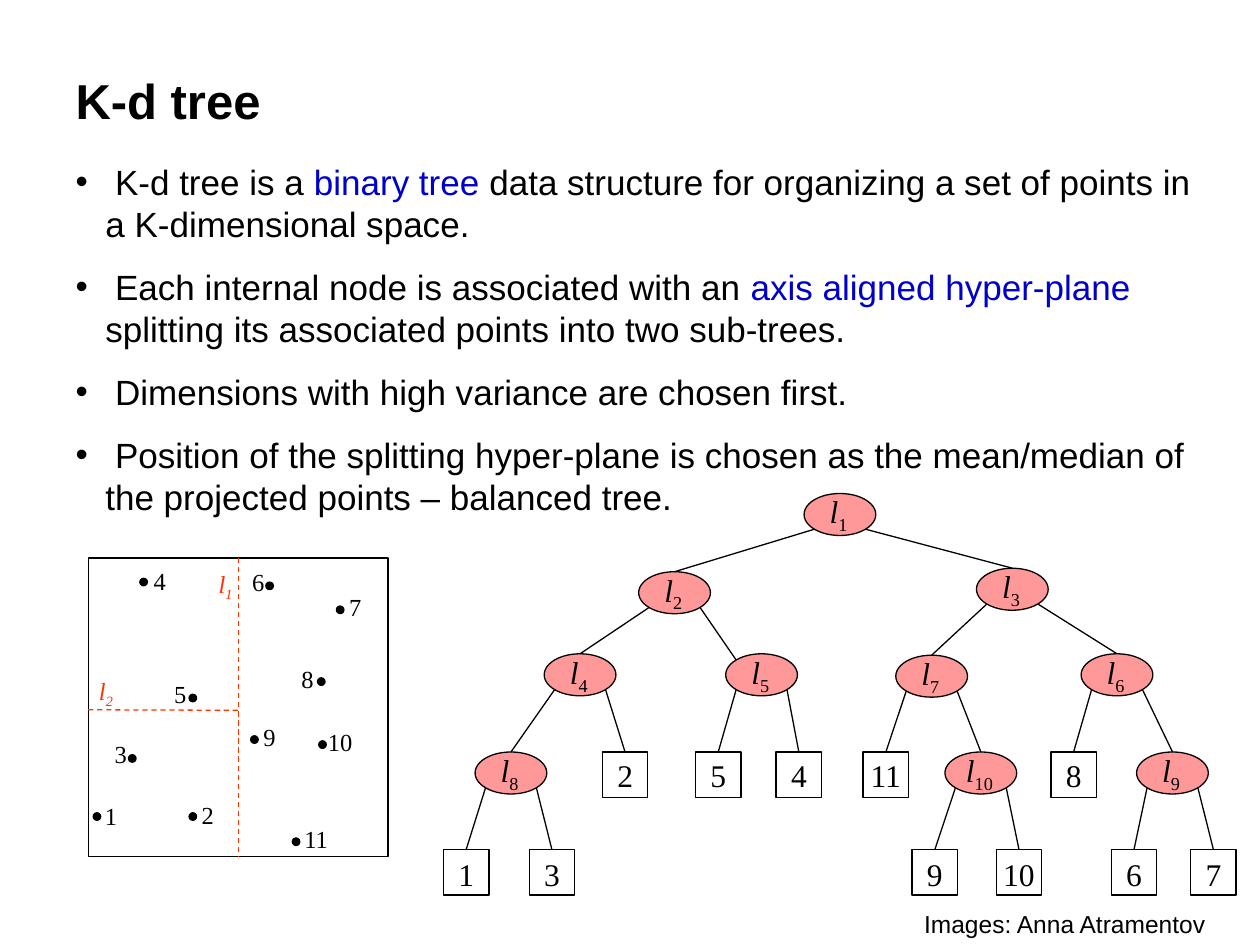
import pptx
import pptx.dml.color
import pptx.enum.dml
import pptx.enum.shapes
import pptx.enum.text
import pptx.oxml.ns
import pptx.util
from lxml import etree

Pt = pptx.util.Pt
Shapes = pptx.enum.shapes.MSO_SHAPE
Align = pptx.enum.text.PP_ALIGN
Anchor = pptx.enum.text.MSO_ANCHOR

BLACK, BLUE, RED, PINK = "000000", "0000CC", "FF3300", "FF9999"
SANS, SERIF = "Arial", "Times New Roman"
NODE_WIDTH, NODE_HEIGHT, LEAF_SIZE, DOT_SIZE = 41, 24, 26, 4.3
CORNER_X, CORNER_Y = 14.5, 8.4
SIDE_INSETS = 14.4

BULLETS = [
    [(" K-d tree is a ", BLACK), ("binary tree ", BLUE),
     ("data structure for organizing a set of points in a K-dimensional space.", BLACK)],
    [(" Each internal node is associated with an ", BLACK), ("axis aligned hyper-plane ", BLUE),
     ("splitting its associated points into two sub-trees.", BLACK)],
    [(" Dimensions with high variance are chosen first.", BLACK)],
    [(" Position of the splitting hyper-plane is chosen as the mean/median of "
      "the projected points – balanced tree.", BLACK)],
]

NODES = {
    "l1": (480, 294), "l2": (385.5, 338.7), "l3": (578.5, 336.7),
    "l4": (331.5, 385.6), "l5": (435.2, 385.6), "l6": (638.3, 385.6), "l7": (532.4, 386.4),
    "l8": (292, 441.7), "l9": (670, 441.7), "l10": (560.5, 441.7),
}
UPPER_LEAVES = {"2": 357.2, "5": 410.4, "4": 456.5, "11": 506.2, "8": 613.5}
LOWER_LEAVES = {"1": 266.4, "3": 315.4, "9": 534.2, "10": 582.3, "6": 648, "7": 693.4}
LEAVES = {name: (x, 442.8) for name, x in UPPER_LEAVES.items()}
LEAVES.update({name: (x, 498.5) for name, x in LOWER_LEAVES.items()})
CHILDREN = {
    "l1": ("l2", "l3"), "l2": ("l4", "l5"), "l3": ("l7", "l6"),
    "l4": ("l8", "2"), "l5": ("5", "4"), "l7": ("11", "l10"), "l6": ("8", "l9"),
    "l8": ("1", "3"), "l10": ("9", "10"), "l9": ("6", "7"),
}

POINTS = {
    "1": (55.4, 466.6, 8, -0.4), "2": (110.2, 466.6, 8.6, -1.1),
    "3": (75.6, 433.4, -6.5, -2.5), "4": (82.1, 332.6, 9.3, -1),
    "5": (110.2, 398.9, -7.2, -2.5), "6": (154.1, 334.8, -6.5, -2.5),
    "7": (194.4, 348.5, 8.6, -1.8), "8": (183.6, 389.5, -7.9, -1.8),
    "9": (145.4, 422.6, 8.7, -1.8), "10": (184.3, 425.5, 10.1, -1.8),
    "11": (169.2, 481, 11.5, -1.8),
}


def color(value):
    return pptx.dml.color.RGBColor.from_string(value)


class SlideBuilder:
    def __init__(self, page, line_width=0.75):
        self.page = page
        self.line_width = line_width

    def style(self, paragraph, size, name, tint=BLACK):
        paragraph.font.size = Pt(size)
        paragraph.font.name = name
        paragraph.font.color.rgb = color(tint)

    def place(self, shape, left, top, width, height):
        shape.left, shape.top, shape.width, shape.height = map(Pt, (left, top, width, height))

    def title(self, text, *bounds):
        shape = self.page.shapes.title
        self.place(shape, *bounds)
        shape.text_frame.text = text
        shape.text_frame.vertical_anchor = Anchor.MIDDLE
        para = shape.text_frame.paragraphs[0]
        para.alignment = Align.LEFT
        self.style(para, 28, SANS)
        para.font.bold = True

    def bullets(self, items, *bounds):
        shape = self.page.placeholders[1]
        self.place(shape, *bounds)
        frame = shape.text_frame
        for index, item in enumerate(items):
            para = frame.add_paragraph() if index else frame.paragraphs[0]
            self.style(para, 20, SANS)
            para.space_before, para.space_after = Pt(0), Pt(12)
            para.line_spacing = 1.0
            properties = para._p.get_or_add_pPr()
            properties.set("marL", str(Pt(17)))
            properties.set("indent", str(-Pt(17)))
            for text, tint in item:
                span = para.add_run()
                span.text = text
                span.font.color.rgb = color(tint)

    def shape(self, kind, x, y, width, height, fill=None):
        shape = self.page.shapes.add_shape(
            kind, Pt(x - width / 2), Pt(y - height / 2), Pt(width), Pt(height))
        shape.shadow.inherit = False
        if fill:
            shape.fill.solid()
            shape.fill.fore_color.rgb = color(fill)
        else:
            shape.fill.background()
        shape.line.color.rgb = color(BLACK)
        shape.line.width = Pt(self.line_width)

    def line(self, start, end, tint=BLACK, dashed=False):
        line = self.page.shapes.add_connector(
            pptx.enum.shapes.MSO_CONNECTOR.STRAIGHT, *map(Pt, start + end))
        line.line.color.rgb = color(tint)
        line.line.width = Pt(self.line_width)
        if dashed:
            line.line.dash_style = pptx.enum.dml.MSO_LINE.DASH
        etree.SubElement(line._element.spPr, pptx.oxml.ns.qn("a:effectLst"))

    def label(self, text, x, y, size, width, name=SERIF, tint=BLACK):
        height = size * 1.2 + 7.2
        box = self.page.shapes.add_textbox(
            Pt(x - width / 2), Pt(y - height / 2), Pt(width), Pt(height))
        box.text_frame.word_wrap = False
        para = box.text_frame.paragraphs[0]
        para.alignment = Align.CENTER
        self.style(para, size, name, tint)
        span = para.add_run()
        span.text = text
        return para

    def number(self, text, x, y, size):
        self.label(text, x, y, size, SIDE_INSETS + 1 + size * 0.5 * len(text))

    def split_label(self, name, x, y, size, tint=BLACK, italic_index=False):
        letter, index = name[0], name[1:]
        width = SIDE_INSETS + size * (0.3 + 0.35 * len(index))
        para = self.label(letter, x, y, size, width, tint=tint)
        para.runs[0].font.italic = True
        span = para.add_run()
        span.text = index
        span.font.italic = italic_index
        span._r.get_or_add_rPr().set("baseline", "-25000")

    def edge(self, parent, child, side):
        x, y = NODES[parent]
        if child in LEAVES:
            end_x, end_y = LEAVES[child]
            end_y -= LEAF_SIZE / 2
        else:
            end_x, end_y = NODES[child]
            end_y -= NODE_HEIGHT / 2
        if child == "l5":
            end_x -= CORNER_X
            end_y += NODE_HEIGHT / 2 - CORNER_Y
        self.line((x + side * CORNER_X, y + CORNER_Y), (end_x, end_y))

    def tree(self):
        for x, y in NODES.values():
            self.shape(Shapes.OVAL, x, y, NODE_WIDTH, NODE_HEIGHT, PINK)
        for parent, (left, right) in CHILDREN.items():
            self.edge(parent, left, -1)
            self.edge(parent, right, 1)
        for name, (x, y) in NODES.items():
            self.split_label(name, x - 0.8, y - 1.8, 18)
        for name, (x, y) in LEAVES.items():
            self.shape(Shapes.RECTANGLE, x, y, LEAF_SIZE, LEAF_SIZE)
            self.number(name, x, y + (1 if name in LOWER_LEAVES else 0), 18)

    def scatter(self):
        self.shape(Shapes.RECTANGLE, 136.1, 404.2, 171.2, 170.8)
        for name, (x, y, shift_x, shift_y) in POINTS.items():
            self.shape(Shapes.OVAL, x, y, DOT_SIZE, DOT_SIZE, BLACK)
            self.number(name, x + shift_x, y + shift_y, 14)
        self.line((136.2, 318.8), (136.2, 489.6), RED, True)
        self.line((50.4, 405.6), (137, 405.9), RED, True)
        self.split_label("l1", 128.9, 333.7, 14, RED, True)
        self.split_label("l2", 60.5, 394.9, 14, RED, True)


def main():
    deck = pptx.Presentation()
    deck.slide_width, deck.slide_height = Pt(720), Pt(540)
    builder = SlideBuilder(deck.slides.add_slide(deck.slide_layouts[1]))
    builder.title("K-d tree", 36, 24, 642, 66)
    builder.bullets(BULLETS, 36, 88, 656, 213)
    builder.tree()
    builder.scatter()
    builder.label("Images: Anna Atramentov", 608.5, 528, 14, 177, SANS)
    deck.save("out.pptx")


if __name__ == "__main__":
    main()
